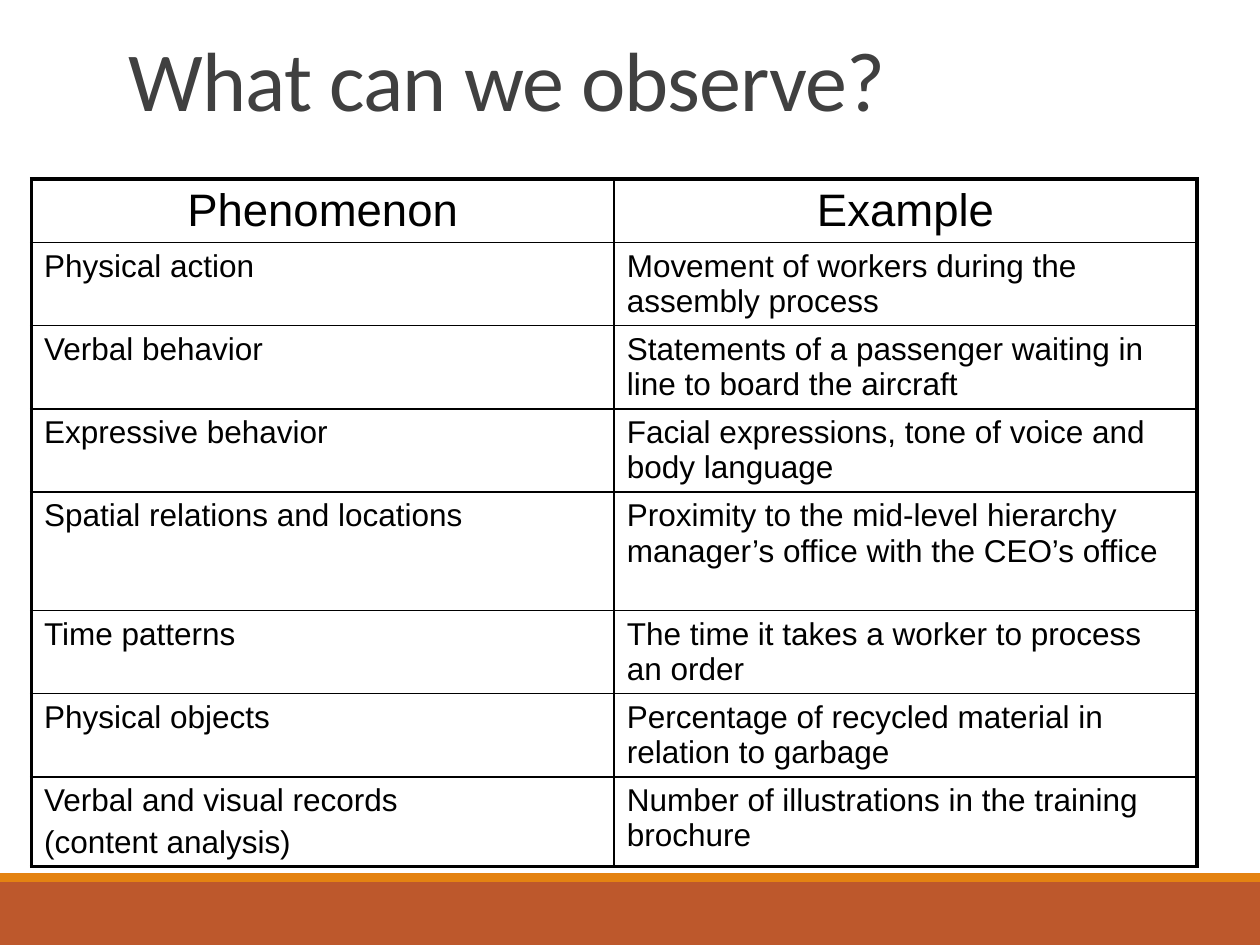
from typing import NamedTuple

from lxml import etree
from pptx import Presentation
from pptx.dml.color import RGBColor
from pptx.enum.shapes import MSO_SHAPE
from pptx.enum.text import MSO_ANCHOR, PP_ALIGN
from pptx.oxml.ns import qn
from pptx.util import Inches, Pt

RECTANGLE = MSO_SHAPE.RECTANGLE
BOTTOM = MSO_ANCHOR.BOTTOM
LEFT, CENTER = PP_ALIGN.LEFT, PP_ALIGN.CENTER
TITLE_ONLY = 5

BLACK = RGBColor(0x00, 0x00, 0x00)
WHITE = RGBColor(0xFF, 0xFF, 0xFF)
GRAY = RGBColor(0x40, 0x40, 0x40)
RUST = RGBColor(0xBD, 0x58, 0x2C)
ORANGE = RGBColor(0xE4, 0x83, 0x12)

WIDTH, HEIGHT = Inches(10), Inches(7.5)
OUTER_LINE, INNER_LINE = Pt(2.25), Pt(1)


class Band(NamedTuple):
    top: float
    height: float
    color: RGBColor


class Row(NamedTuple):
    height: float
    phenomenon: str
    example: str


BANDS = [Band(7, 0.5, RUST), Band(6.93, 0.07, ORANGE)]

ROWS = [
    Row(0.5, "Phenomenon", "Example"),
    Row(0.66, "Physical action", "Movement of workers during the assembly process"),
    Row(0.66, "Verbal behavior",
        "Statements of a passenger waiting in line to board the aircraft"),
    Row(0.66, "Expressive behavior",
        "Facial expressions, tone of voice and body language"),
    Row(0.94, "Spatial relations and locations",
        "Proximity to the mid-level hierarchy manager’s office with the CEO’s office"),
    Row(0.66, "Time patterns", "The time it takes a worker to process an order"),
    Row(0.66, "Physical objects",
        "Percentage of recycled material in relation to garbage"),
    Row(0.71, "Verbal and visual records\n(content analysis)",
        "Number of illustrations in the training brochure"),
]

TITLE_FONT = {"name": "Calibri", "size": Pt(48), "bold": False}
HEADER_FONT = {"name": "Arial", "size": Pt(26), "bold": False}
BODY_FONT = {"name": "Arial", "size": Pt(18), "bold": False}


def format_font(font, values: dict, color: RGBColor) -> None:
    for name, value in values.items():
        setattr(font, name, value)
    font.color.rgb = color


def add_band(slide, band: Band) -> None:
    shape = slide.shapes.add_shape(
        RECTANGLE, 0, Inches(band.top), WIDTH, Inches(band.height))
    shape.shadow.inherit = False
    shape.fill.solid()
    shape.fill.fore_color.rgb = band.color
    shape.line.fill.background()


def set_title(slide, text: str) -> None:
    title = slide.shapes.title
    title.left, title.top = Inches(0.92), Inches(0.17)
    title.width, title.height = Inches(8.25), Inches(0.9)
    title.text_frame.vertical_anchor = BOTTOM
    para = title.text_frame.paragraphs[0]
    para.alignment = LEFT
    para.line_spacing = 0.85
    span = para.add_run()
    span.text = text
    format_font(span.font, TITLE_FONT, GRAY)
    span.font._element.set("spc", "-50")


def set_borders(cell, widths: dict) -> None:
    properties = cell._tc.get_or_add_tcPr()
    for index, (side, width) in enumerate(widths.items()):
        line = etree.Element(qn(f"a:ln{side}"), w=str(int(width)))
        fill = etree.SubElement(line, qn("a:solidFill"))
        etree.SubElement(fill, qn("a:srgbClr"), val=str(BLACK))
        properties.insert(index, line)


def fill_cell(cell, text: str, font: dict, alignment) -> None:
    cell.fill.solid()
    cell.fill.fore_color.rgb = WHITE
    cell.text = text
    for index, para in enumerate(cell.text_frame.paragraphs):
        para.alignment = alignment
        if index:
            para.space_before = Pt(3.6)
        for span in para.runs:
            format_font(span.font, font, BLACK)


def add_observation_table(slide, rows: list[Row]) -> None:
    """Thick lines run around the table, thin ones between its cells."""
    height = Inches(sum(row.height for row in rows))
    table = slide.shapes.add_table(
        len(rows), 2, Inches(0.25), Inches(1.42), Inches(9.25), height).table
    table.horz_banding = False
    last_row = len(rows) - 1
    for r, row in enumerate(rows):
        table.rows[r].height = Inches(row.height)
        font, alignment = (BODY_FONT, LEFT) if r else (HEADER_FONT, CENTER)
        for c, text in enumerate((row.phenomenon, row.example)):
            cell = table.cell(r, c)
            fill_cell(cell, text, font, alignment)
            outside = {"L": c == 0, "R": c == 1, "T": r == 0, "B": r == last_row}
            set_borders(cell, {side: OUTER_LINE if outer else INNER_LINE
                               for side, outer in outside.items()})


def main() -> None:
    deck = Presentation()
    deck.slide_width, deck.slide_height = WIDTH, HEIGHT
    slide = deck.slides.add_slide(deck.slide_layouts[TITLE_ONLY])
    for band in BANDS:
        add_band(slide, band)
    set_title(slide, "What can we observe?")
    add_observation_table(slide, ROWS)
    deck.save("out.pptx")


if __name__ == "__main__":
    main()
